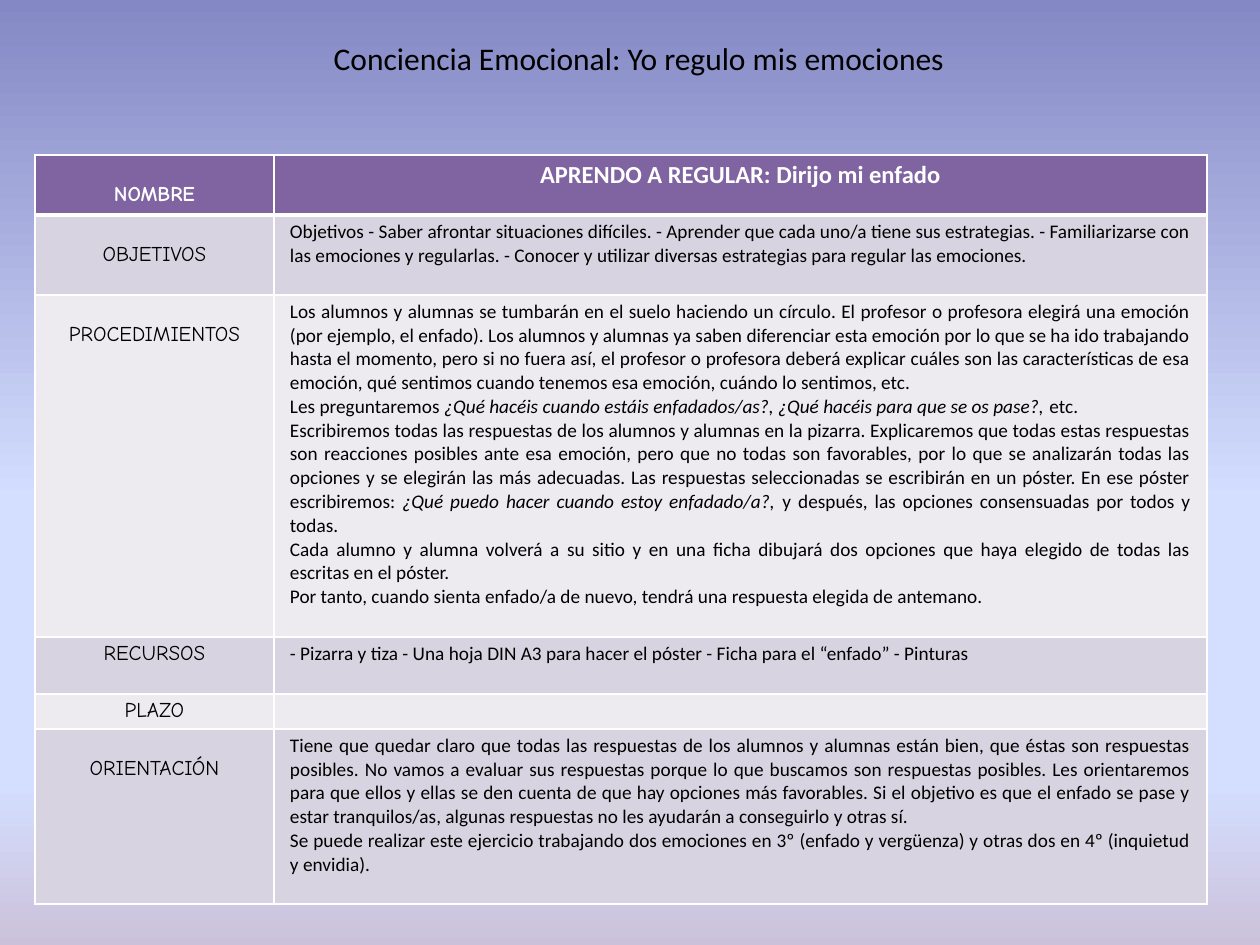
from typing import NamedTuple

import lxml.etree
import pptx
import pptx.dml.color
import pptx.enum.text
import pptx.oxml.ns
import pptx.util

PX = 914400 // 126
WHITE, BLACK = "FFFFFF", "000000"
PURPLE, DARK_BAND, LIGHT_BAND = "8064A2", "D8D3E0", "EDEAF0"
BACKGROUND_STOPS = [(0, "8488C4"), (53, "D4DEFF"), (83, "D4DEFF"), (100, "CCC1DA")]
COLUMN_WIDTHS = [239, 933]
MARGIN_X, MARGIN_Y, LABEL_DROP = 16, 5, 23
ALIGN = pptx.enum.text.PP_ALIGN
qn = pptx.oxml.ns.qn


class Row(NamedTuple):
    label: str
    height: int
    fill: str
    dropped: bool  # the label sits one line lower
    paragraphs: list[str]  # asterisks enclose italics


class TextStyle(NamedTuple):
    font: str
    size: int
    color: str
    bold: bool
    align: ALIGN


ROWS = [
    Row("NOMBRE", 60, PURPLE, True, ["APRENDO A REGULAR: Dirijo mi enfado"]),
    Row("OBJETIVOS", 80, DARK_BAND, True, [
        "Objetivos - Saber afrontar situaciones difíciles. - Aprender que cada uno/a tiene sus "
        "estrategias. - Familiarizarse con las emociones y regularlas. - Conocer y utilizar "
        "diversas estrategias para regular las emociones.",
    ]),
    Row("PROCEDIMIENTOS", 342, LIGHT_BAND, True, [
        "Los alumnos y alumnas se tumbarán en el suelo haciendo un círculo. El profesor o "
        "profesora elegirá una emoción (por ejemplo, el enfado). Los alumnos y alumnas ya saben "
        "diferenciar esta emoción por lo que se ha ido trabajando hasta el momento, pero si no "
        "fuera así, el profesor o profesora deberá explicar cuáles son las características de "
        "esa emoción, qué sentimos cuando tenemos esa emoción, cuándo lo sentimos, etc.",
        "Les preguntaremos *¿Qué hacéis cuando estáis enfadados/as?, ¿Qué hacéis para que se os "
        "pase?, *etc.",
        "Escribiremos todas las respuestas de los alumnos y alumnas en la pizarra. Explicaremos "
        "que todas estas respuestas son reacciones posibles ante esa emoción, pero que no todas "
        "son favorables, por lo que se analizarán todas las opciones y se elegirán las más "
        "adecuadas. Las respuestas seleccionadas se escribirán en un póster. En ese póster "
        "escribiremos: *¿Qué puedo hacer cuando estoy enfadado/a?, *y después, las opciones "
        "consensuadas por todos y todas. ",
        "Cada alumno y alumna volverá a su sitio y en una ficha dibujará dos opciones que haya "
        "elegido de todas las escritas en el póster. ",
        "Por tanto, cuando sienta enfado/a de nuevo, tendrá una respuesta elegida de antemano. ",
    ]),
    Row("RECURSOS", 57, DARK_BAND, False, [
        "- Pizarra y tiza - Una hoja DIN A3 para hacer el póster - Ficha para el “enfado” "
        "- Pinturas ",
    ]),
    Row("PLAZO", 35, LIGHT_BAND, False, [""]),
    Row("ORIENTACIÓN", 175, DARK_BAND, True, [
        "Tiene que quedar claro que todas las respuestas de los alumnos y alumnas están bien, "
        "que éstas son respuestas posibles. No vamos a evaluar sus respuestas porque lo que "
        "buscamos son respuestas posibles. Les orientaremos para que ellos y ellas se den cuenta "
        "de que hay opciones más favorables. Si el objetivo es que el enfado se pase y estar "
        "tranquilos/as, algunas respuestas no les ayudarán a conseguirlo y otras sí. ",
        "Se puede realizar este ejercicio trabajando dos emociones en 3º (enfado y vergüenza) y "
        "otras dos en 4º (inquietud y envidia). ",
    ]),
]


def px(length: int) -> pptx.util.Emu:
    return pptx.util.Emu(length * PX)


def rgb(color: str) -> pptx.dml.color.RGBColor:
    return pptx.dml.color.RGBColor.from_string(color)


def write_text(text_frame, paragraphs: list[str], style: TextStyle) -> None:
    for index, text in enumerate(paragraphs):
        paragraph = text_frame.paragraphs[0] if index == 0 else text_frame.add_paragraph()
        paragraph.alignment = style.align
        paragraph.font.name = style.font
        paragraph.font.size = pptx.util.Pt(style.size)
        paragraph.font.bold = style.bold
        paragraph.font.color.rgb = rgb(style.color)
        for position, part in enumerate(text.split("*")):
            if part:
                run = paragraph.add_run()
                run.text = part
                if position % 2:
                    run.font.italic = True


def add_solid_fill(parent, color: str) -> None:
    fill = lxml.etree.SubElement(parent, qn("a:solidFill"))
    lxml.etree.SubElement(fill, qn("a:srgbClr"), val=color)


def set_borders(cell, top: int, bottom: int) -> None:
    properties = cell._tc.get_or_add_tcPr()
    sides = {"a:lnL": 1, "a:lnR": 1, "a:lnT": top, "a:lnB": bottom}
    for index, (tag, points) in enumerate(sides.items()):
        line = lxml.etree.Element(qn(tag), w=str(pptx.util.Pt(points)))
        add_solid_fill(line, WHITE)
        properties.insert(index, line)


def paint_background(slide) -> None:
    fill = slide.background.fill
    fill.gradient()
    fill.gradient_angle = 270
    stop_list = slide.element.find(".//" + qn("a:gsLst"))
    for stop in list(stop_list):
        stop_list.remove(stop)
    for percent, color in BACKGROUND_STOPS:
        stop = lxml.etree.SubElement(stop_list, qn("a:gs"), pos=str(percent * 1000))
        lxml.etree.SubElement(stop, qn("a:srgbClr"), val=color)


def add_title(slide) -> None:
    box = slide.shapes.add_textbox(px(292), px(33), px(694), px(50))
    box.text_frame.word_wrap = True
    style = TextStyle("Calibri", 18, BLACK, False, ALIGN.CENTER)
    write_text(box.text_frame, ["Conciencia Emocional: Yo regulo mis emociones"], style)


def add_activity_table(slide) -> None:
    height = sum(row.height for row in ROWS)
    table = slide.shapes.add_table(
        len(ROWS), len(COLUMN_WIDTHS), px(35), px(155), px(sum(COLUMN_WIDTHS)), px(height)
    ).table
    for column, width in zip(table.columns, COLUMN_WIDTHS):
        column.width = px(width)
    for index, row in enumerate(ROWS):
        table.rows[index].height = px(row.height)
        header = index == 0
        color = WHITE if header else BLACK
        label_style = TextStyle("Comic Neue", 12, color, header, ALIGN.CENTER)
        body_style = TextStyle("Calibri", 14 if header else 11, color, header,
                               ALIGN.CENTER if header else ALIGN.JUSTIFY)
        label, body = table.cell(index, 0), table.cell(index, 1)
        for cell in (label, body):
            cell.margin_left = cell.margin_right = px(MARGIN_X)
            cell.margin_top = cell.margin_bottom = px(MARGIN_Y)
            cell.fill.solid()
            cell.fill.fore_color.rgb = rgb(row.fill)
            set_borders(cell, top=3 if index == 1 else 1, bottom=3 if header else 1)
        if row.dropped:
            label.margin_top = px(MARGIN_Y + LABEL_DROP)
        write_text(label.text_frame, [row.label], label_style)
        write_text(body.text_frame, row.paragraphs, body_style)


def main() -> None:
    presentation = pptx.Presentation()
    presentation.slide_width, presentation.slide_height = px(1260), px(945)
    slide = presentation.slides.add_slide(presentation.slide_layouts[6])
    paint_background(slide)
    add_activity_table(slide)
    add_title(slide)
    presentation.save("out.pptx")


if __name__ == "__main__":
    main()
